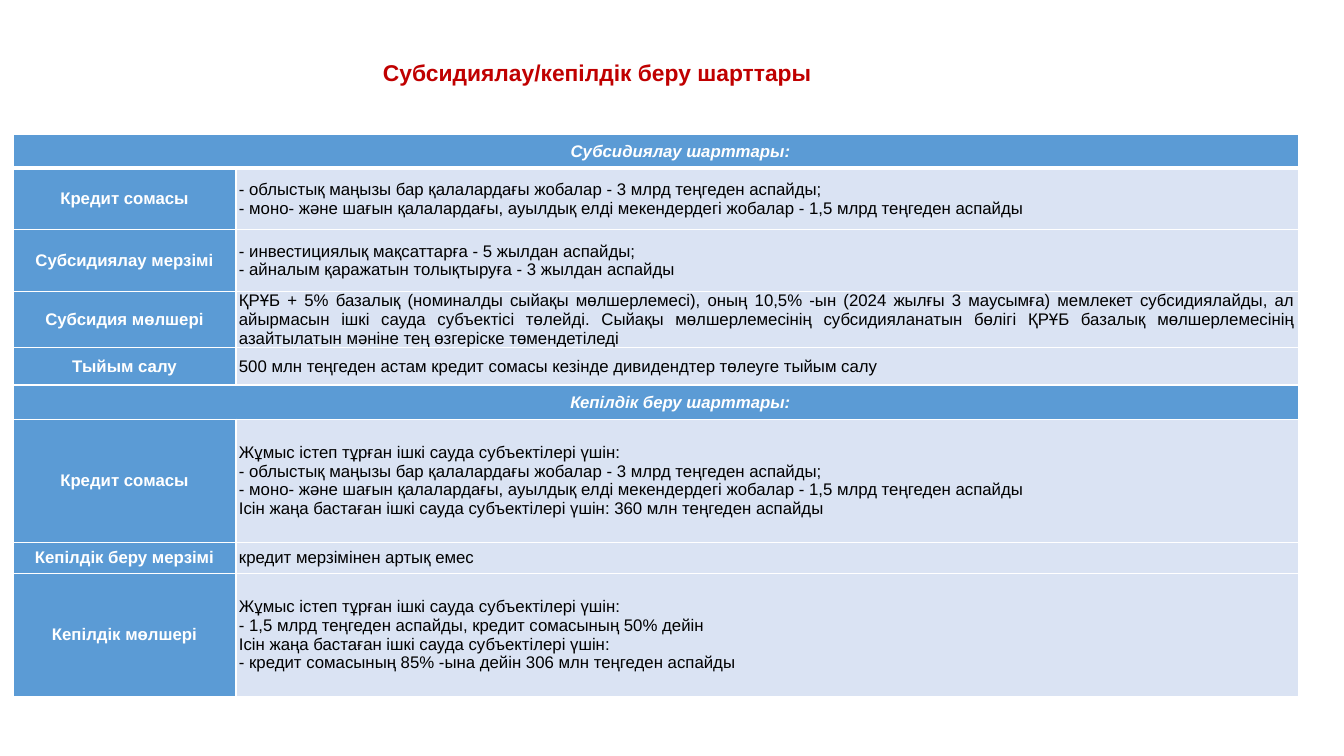
from dataclasses import dataclass

from lxml import etree
from pptx import Presentation, util as u
from pptx.dml import color
from pptx.enum import text
from pptx.oxml import ns


@dataclass(frozen=True)
class Theme:
    face: str = "Arial"
    red: str = "C00000"
    blue: str = "5B9BD5"
    pale: str = "DAE3F3"
    white: str = "FFFFFF"
    black: str = "000000"
    head: float = 16.3
    body: float = 12
    thin: float = 1
    thick: float = 3


SCALE = 9144
CENTER = text.PP_ALIGN.CENTER
JUST = text.PP_ALIGN.JUSTIFY
MIDDLE = text.MSO_ANCHOR.MIDDLE


def px(n):
    return u.Emu(n * SCALE)


def rgb(code):
    return color.RGBColor.from_string(code)


class Deck:
    def __init__(self, theme, wide, high):
        self.theme = theme
        self.show = Presentation()
        self.show.slide_width, self.show.slide_height = px(wide), px(high)
        self.slide = self.show.slides.add_slide(self.show.slide_layouts[5])

    def style(self, para, size, ink, align, bold=False, slant=False):
        para.alignment = align
        font = para.font
        font.name, font.size = self.theme.face, u.Pt(size)
        font.bold, font.italic = bold, slant
        font.color.rgb = rgb(ink)

    def title(self, words, x, y, w, h):
        box = self.slide.shapes.title
        box.left, box.top, box.width, box.height = map(px, (x, y, w, h))
        frame = box.text_frame
        frame.text = words
        frame.word_wrap = True
        frame.auto_size = text.MSO_AUTO_SIZE.NONE
        frame.vertical_anchor = MIDDLE
        frame.margin_left = frame.margin_right = 0
        frame.margin_top = frame.margin_bottom = 0
        self.style(frame.paragraphs[0], self.theme.head, self.theme.red, CENTER, True)

    def edge(self, cell, top, base):
        props = cell._tc.get_or_add_tcPr()
        sizes = {"L": self.theme.thin, "R": self.theme.thin, "T": top, "B": base}
        for spot, (side, size) in enumerate(sizes.items()):
            line = etree.Element(ns.qn("a:ln" + side), w=str(u.Pt(size)))
            fill = etree.SubElement(line, ns.qn("a:solidFill"))
            etree.SubElement(fill, ns.qn("a:srgbClr"), val=self.theme.white)
            props.insert(spot, line)

    def cell(self, cell, words, fill, ink, align, bold=False, slant=False):
        cell.fill.solid()
        cell.fill.fore_color.rgb = rgb(fill)
        cell.vertical_anchor = MIDDLE
        cell.margin_left = cell.margin_right = px(3)
        cell.margin_top = cell.margin_bottom = 0
        cell.text = words
        for para in cell.text_frame.paragraphs:
            self.style(para, self.theme.body, ink, align, bold, slant)

    def band(self, cell, words):
        self.cell(cell, words, self.theme.blue, self.theme.white, CENTER, True, True)
        para = cell.text_frame.paragraphs[0]
        para.line_spacing = 1.07
        props = para._p.get_or_add_pPr()
        props.set("marL", "0")
        props.set("indent", str(px(49)))

    def table(self, rows, cols, x, y):
        t = self.theme
        high = sum(row[0] for row in rows)
        grid = self.slide.shapes.add_table(
            len(rows), len(cols), px(x), px(y), px(sum(cols)), px(high)).table
        grid.horz_banding = False
        for col, wide in zip(grid.columns, cols):
            col.width = px(wide)
        for i, (tall, name, *lines) in enumerate(rows):
            grid.rows[i].height = px(tall)
            left, right = grid.cell(i, 0), grid.cell(i, 1)
            if lines:
                self.cell(left, name, t.blue, t.white, CENTER, True)
                self.cell(right, "\n".join(lines), t.pale, t.black, JUST)
            else:
                left.merge(right)
                self.band(left, name)
            for part in (left, right):
                self.edge(part, t.thick if i == 1 else t.thin,
                          t.thick if i == 0 else t.thin)

    def save(self):
        self.show.save("out.pptx")


CITY = "- облыстық маңызы бар қалалардағы жобалар - 3 млрд теңгеден аспайды;"
TOWN = ("- моно- және шағын қалалардағы, ауылдық елді мекендердегі жобалар"
        " - 1,5 млрд теңгеден аспайды")
FIRM = "Жұмыс істеп тұрған ішкі сауда субъектілері үшін:"
START = "Ісін жаңа бастаған ішкі сауда субъектілері үшін:"
SUM = "Кредит сомасы"

ROWS = [
    (34, "Субсидиялау шарттары:"),
    (61, SUM, CITY, TOWN),
    (61, "Субсидиялау мерзімі",
     "- инвестициялық мақсаттарға - 5 жылдан аспайды;",
     "- айналым қаражатын толықтыруға - 3 жылдан аспайды"),
    (55, "Субсидия мөлшері",
     "ҚРҰБ + 5% базалық (номиналды сыйақы мөлшерлемесі), оның 10,5% -ын "
     "(2024 жылғы 3 маусымға) мемлекет субсидиялайды, ал айырмасын ішкі сауда "
     "субъектісі төлейді. Сыйақы мөлшерлемесінің субсидияланатын бөлігі ҚРҰБ "
     "базалық мөлшерлемесінің азайтылатын мәніне тең өзгеріске төмендетіледі"),
    (37, "Тыйым салу",
     "500 млн теңгеден астам кредит сомасы кезінде дивидендтер төлеуге тыйым салу"),
    (34, "Кепілдік беру шарттары:"),
    (122, SUM, FIRM, CITY, TOWN, START + " 360 млн теңгеден аспайды"),
    (31, "Кепілдік беру мерзімі", "кредит мерзімінен артық емес"),
    (122, "Кепілдік мөлшері", FIRM,
     "- 1,5 млрд теңгеден аспайды, кредит сомасының 50% дейін", START,
     "- кредит сомасының 85% -ына дейін 306 млн теңгеден аспайды"),
]


def main():
    deck = Deck(Theme(), 1333, 750)
    deck.title("Субсидиялау/кепілдік беру шарттары", 181, 41, 823, 62)
    deck.table(ROWS, (221, 1054), 13, 133)
    deck.save()


if __name__ == "__main__":
    main()
